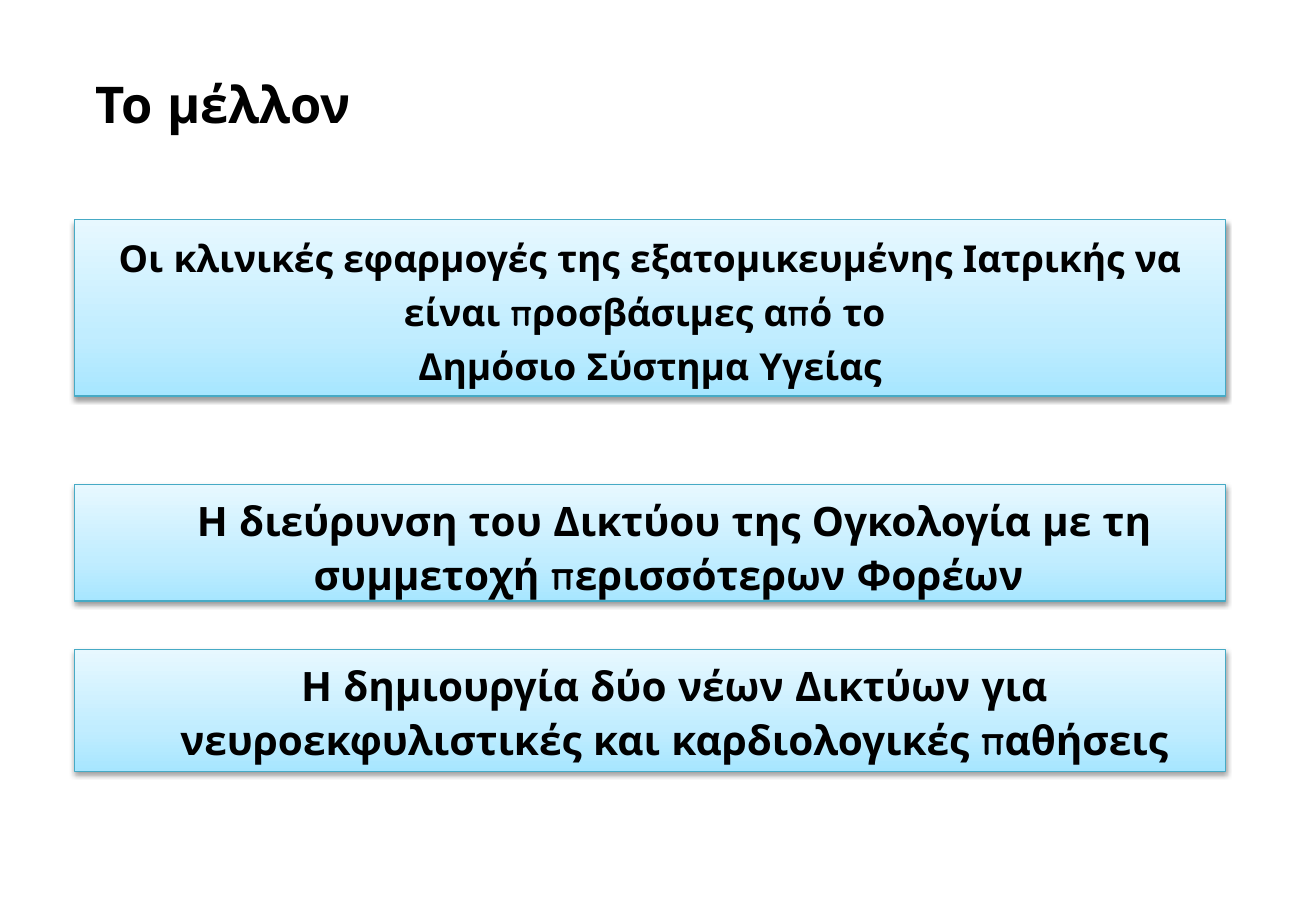
from dataclasses import dataclass

import pptx
import pptx.dml.color
import pptx.enum.shapes
import pptx.enum.text
import pptx.oxml
import pptx.oxml.ns
import pptx.util

Pt = pptx.util.Pt
RGB = pptx.dml.color.RGBColor.from_string
Align = pptx.enum.text.PP_ALIGN
Anchor = pptx.enum.text.MSO_ANCHOR


@dataclass(frozen=True)
class Theme:
    font: str = "Quicksand"
    text: str = "000000"
    line: str = "46AAC5"
    gradient: tuple[tuple[int, str], ...] = (
        (0, "A7E6FF"), (35, "C1EDFF"), (100, "E7F8FF"))
    title_size: float = 30
    lead_size: float = 22
    goal_size: float = 24
    line_spacing: float = 32


@dataclass(frozen=True)
class Goal:
    top: float
    height: float
    size: float
    indent: float
    paragraphs: tuple[str, ...]


THEME = Theme()
GOAL_LEFT, GOAL_WIDTH = 44, 682.5

GOALS = (
    Goal(130.3, 104.4, THEME.lead_size, 0, (
        "Οι κλινικές εφαρμογές της εξατομικευμένης Ιατρικής να "
        "είναι προσβάσιμες από το ",
        "Δημόσιο Σύστημα Υγείας")),
    Goal(287.3, 69, THEME.goal_size, 28.8, (
        "Η διεύρυνση του Δικτύου της Ογκολογία με τη "
        "συμμετοχή περισσότερων Φορέων ",)),
    Goal(385.2, 72, THEME.goal_size, 28.8, (
        "Η δημιουργία δύο νέων Δικτύων για "
        "νευροεκφυλιστικές και καρδιολογικές παθήσεις",)),
)


def add_run(p, text: str, size: float) -> None:
    r = p.add_run()
    r.text = text
    r.font.name = THEME.font
    r.font.size = Pt(size)
    r.font.bold = True
    r.font.color.rgb = RGB(THEME.text)


def style_goal(sp) -> None:
    """Give a goal box its three-stop gradient, outline and soft shadow."""
    ns = pptx.oxml.ns.nsdecls("a")
    stops = "".join(
        f'<a:gs pos="{pos * 1000}"><a:srgbClr val="{color}"/></a:gs>'
        for pos, color in THEME.gradient)
    gradient = pptx.oxml.parse_xml(
        f'<a:gradFill {ns} rotWithShape="1"><a:gsLst>{stops}</a:gsLst>'
        '<a:lin ang="16200000" scaled="0"/></a:gradFill>')
    shadow = pptx.oxml.parse_xml(
        f'<a:effectLst {ns}><a:outerShdw blurRad="{Pt(3.1)}" dist="{Pt(1.6)}" '
        'dir="5400000" rotWithShape="0"><a:srgbClr val="000000">'
        '<a:alpha val="38000"/></a:srgbClr></a:outerShdw></a:effectLst>')
    sp.line.color.rgb = RGB(THEME.line)
    sp.line.width = Pt(0.75)
    props = sp.element.spPr
    props.find(pptx.oxml.ns.qn("a:prstGeom")).addnext(gradient)
    props.append(shadow)


def add_title(s, text: str) -> None:
    sp = s.shapes.title
    sp.left, sp.top, sp.width, sp.height = Pt(49.7), Pt(39.6), Pt(675.4), Pt(44)
    tf = sp.text_frame
    tf.word_wrap = True
    tf.auto_size = pptx.enum.text.MSO_AUTO_SIZE.NONE
    tf.vertical_anchor = Anchor.TOP
    p = tf.paragraphs[0]
    p.alignment = Align.LEFT
    add_run(p, text, THEME.title_size)


def add_goal(s, goal: Goal) -> None:
    sp = s.shapes.add_shape(
        pptx.enum.shapes.MSO_SHAPE.RECTANGLE,
        Pt(GOAL_LEFT), Pt(goal.top), Pt(GOAL_WIDTH), Pt(goal.height))
    style_goal(sp)
    tf = sp.text_frame
    tf.word_wrap = True
    tf.vertical_anchor = Anchor.TOP
    for i, text in enumerate(goal.paragraphs):
        p = tf.add_paragraph() if i else tf.paragraphs[0]
        p.alignment = Align.CENTER
        p.line_spacing = Pt(THEME.line_spacing)
        if goal.indent:
            p._p.get_or_add_pPr().set("marL", str(Pt(goal.indent)))
        add_run(p, text, goal.size)


def main() -> None:
    prs = pptx.Presentation()
    prs.slide_width, prs.slide_height = Pt(780), Pt(540)
    s = prs.slides.add_slide(prs.slide_layouts.get_by_name("Title Only"))

    # Heading
    add_title(s, "Το μέλλον")

    # Goals, from top to bottom
    for goal in GOALS:
        add_goal(s, goal)

    prs.save("out.pptx")


if __name__ == "__main__":
    main()
